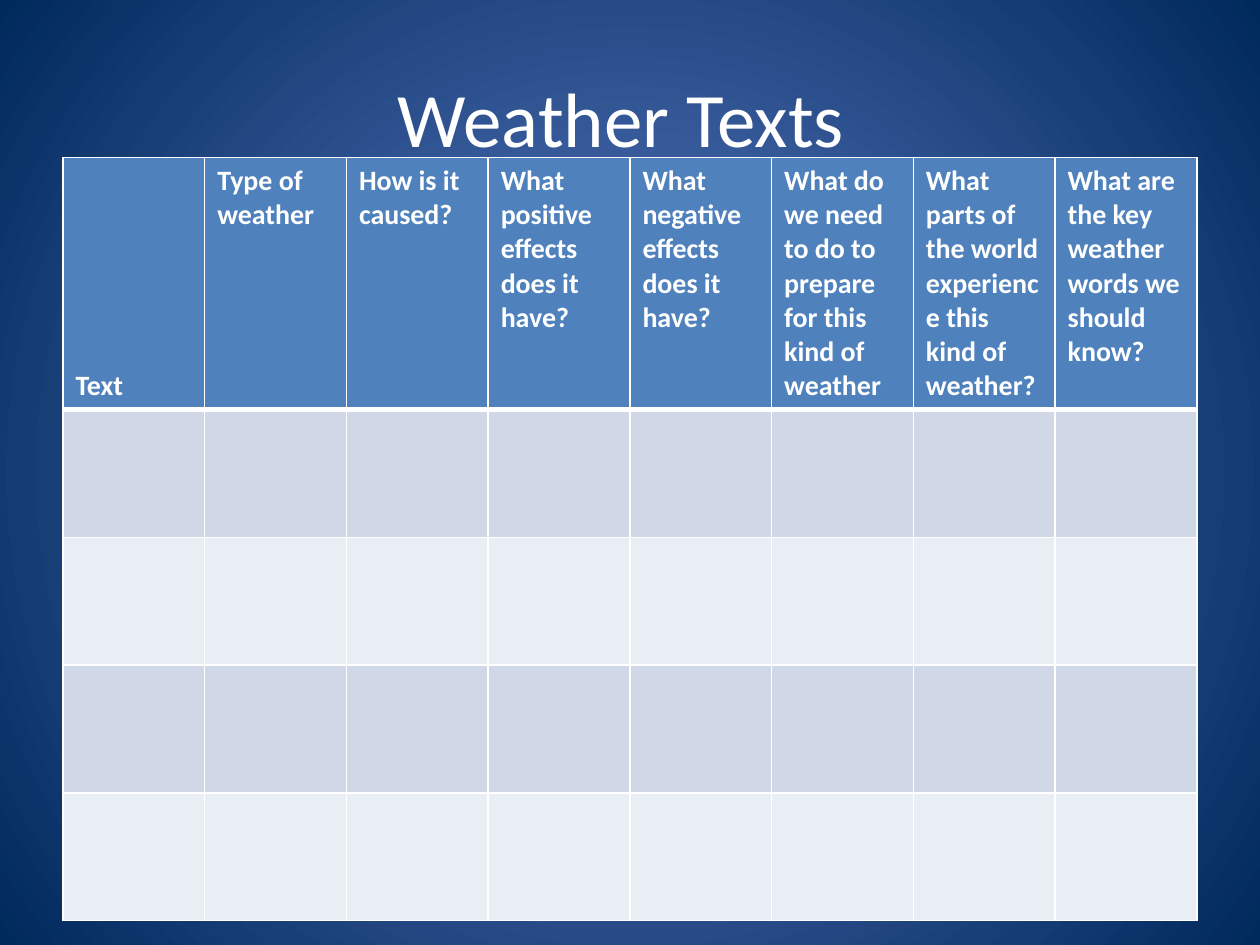
from lxml import etree
from pptx import Presentation
from pptx.dml.color import RGBColor
from pptx.enum import text
from pptx.oxml import ns
from pptx.util import Pt

COLORS = {
    "glow": "5E7CC5",
    "navy": "00295C",
    "white": "FFFFFF",
    "header": "4F81BD",
    "band_dark": "D0D8E8",
    "band_light": "E9EDF4",
}
FONT = "Calibri"
HEADINGS = [
    "Text",
    "Type of weather",
    "How is it caused?",
    "What positive effects does it have?",
    "What negative effects does it have?",
    "What do we need to do to prepare for this kind of weather",
    "What parts of the world experience this kind of weather?",
    "What are the key weather words we should know?",
]
TEXT_ROWS = 4
HEADER_HEIGHT = 144


def color(name):
    return RGBColor.from_string(COLORS[name])


def add_run(paragraph, words, size, bold=False):
    run = paragraph.add_run()
    run.text = words
    run.font.name = FONT
    run.font.size = Pt(size)
    run.font.bold = bold
    run.font.color.rgb = color("white")


def paint_background(slide):
    """Radial gradient, light in the centre and dark at the corners."""
    fill = slide.background.fill
    fill.gradient()
    for stop, position, name in zip(fill.gradient_stops, (0, 1), ("glow", "navy")):
        stop.position = position
        stop.color.rgb = color(name)
    gradient = next(slide.element.iter(ns.qn("a:gradFill")))
    gradient.remove(gradient.find(ns.qn("a:lin")))
    circle = etree.SubElement(gradient, ns.qn("a:path"), path="circle")
    etree.SubElement(circle, ns.qn("a:fillToRect"),
                     {side: "50000" for side in "ltrb"})


def place_title(slide, left, top, width, height):
    title = slide.shapes.title
    title.left, title.top = Pt(left), Pt(top)
    title.width, title.height = Pt(width), Pt(height)
    title.text_frame.vertical_anchor = text.MSO_ANCHOR.MIDDLE
    paragraph = title.text_frame.paragraphs[0]
    paragraph.alignment = text.PP_ALIGN.CENTER
    add_run(paragraph, "Weather Texts ", 44)


def style_cell(cell, fill_name, **widths):
    """Fill a cell and give it white borders; widths maps sides to points."""
    properties = cell._tc.get_or_add_tcPr()
    for side in ("L", "R", "T", "B"):
        line = etree.SubElement(properties, ns.qn(f"a:ln{side}"),
                                w=str(Pt(widths.get(side, 1))))
        solid = etree.SubElement(line, ns.qn("a:solidFill"))
        etree.SubElement(solid, ns.qn("a:srgbClr"), val=COLORS["white"])
    cell.fill.solid()
    cell.fill.fore_color.rgb = color(fill_name)


def place_table(slide, left, top, width, height):
    frame = slide.shapes.add_table(TEXT_ROWS + 1, len(HEADINGS), Pt(left), Pt(top),
                                   Pt(width), Pt(height))
    table = frame.table
    table.rows[0].height = Pt(HEADER_HEIGHT)
    for cell, heading in zip(table.rows[0].cells, HEADINGS):
        style_cell(cell, "header", B=3)
        add_run(cell.text_frame.paragraphs[0], heading, 16, bold=True)
    table.cell(0, 0).vertical_anchor = text.MSO_ANCHOR.BOTTOM

    for number in range(1, TEXT_ROWS + 1):
        row = table.rows[number]
        row.height = Pt((height - HEADER_HEIGHT) / TEXT_ROWS)
        for cell in row.cells:
            style_cell(cell, "band_dark" if number % 2 else "band_light",
                       T=3 if number == 1 else 1)


def main():
    presentation = Presentation()
    presentation.slide_width, presentation.slide_height = Pt(720), Pt(540)
    slide = presentation.slides.add_slide(presentation.slide_layouts[5])
    paint_background(slide)
    place_title(slide, 36, 21.6, 648, 90)
    place_table(slide, 36, 90, 648, 436)
    presentation.save("out.pptx")


if __name__ == "__main__":
    main()
